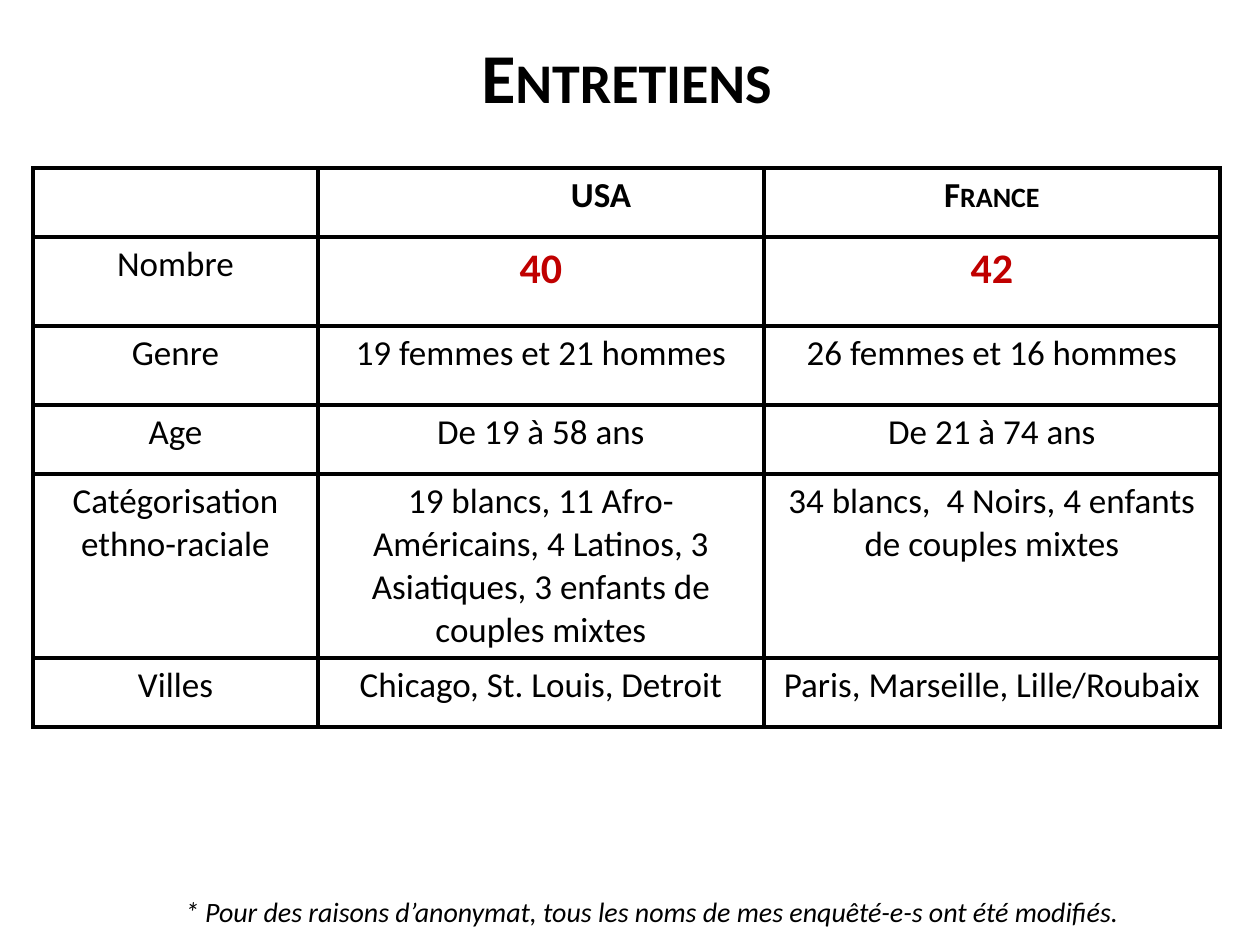
from pptx import Presentation
from pptx import util as u
from pptx.dml.color import RGBColor
from pptx.enum import text as t
from pptx.oxml import parse_xml
from pptx.oxml.ns import nsdecls

PX = 914400 // 126
BLACK = RGBColor(0, 0, 0)
WHITE = RGBColor(255, 255, 255)
RED = RGBColor(0xC0, 0, 0)


def write(frame, words, size=20, color=BLACK, bold=False, italic=False, small=False):
    para = frame.paragraphs[0]
    para.alignment = t.PP_ALIGN.CENTER
    run = para.add_run()
    run.text = words
    font = run.font
    font.name, font.size = "Calibri", u.Pt(size)
    font.bold, font.italic = bold, italic
    font.color.rgb = color
    if small:
        run._r.get_or_add_rPr().set("cap", "small")
    return para


def edge(cell):
    props = cell._tc.get_or_add_tcPr()
    for spot, side in enumerate(("lnL", "lnR", "lnT", "lnB")):
        props.insert(spot, parse_xml(
            f'<a:{side} {nsdecls("a")} w="{u.Pt(2.25)}"><a:solidFill>'
            f'<a:srgbClr val="{BLACK}"/></a:solidFill></a:{side}>'))


deck = Presentation()
deck.slide_width, deck.slide_height = u.Inches(10), u.Inches(7.5)
slide = deck.slides.add_slide(deck.slide_layouts[5])

# Title
title = slide.shapes.title
title.left, title.top, title.width, title.height = [n * PX for n in (150, 27, 953, 97)]
title.text_frame.vertical_anchor = t.MSO_ANCHOR.TOP
write(title.text_frame, "Entretiens", size=40, bold=True, small=True)

# Interview table
rows = [
    ("", "USA", "France"),
    ("Nombre", "40", "42"),
    ("Genre", "19 femmes et 21 hommes", "26 femmes et 16 hommes"),
    ("Age", "De 19 à 58 ans", "De 21 à 74 ans"),
    ("Catégorisation ethno-raciale",
     "19 blancs, 11 Afro-Américains, 4 Latinos, 3 Asiatiques, 3 enfants de couples mixtes",
     "34 blancs,  4 Noirs, 4 enfants de couples mixtes"),
    ("Villes", "Chicago, St. Louis, Detroit", "Paris, Marseille, Lille/Roubaix"),
]
wide = (285, 446, 456)
high = (69, 89, 79, 69, 181, 69)
grid = slide.shapes.add_table(len(rows), len(wide), 33 * PX, 168 * PX,
                              sum(wide) * PX, sum(high) * PX).table
grid.first_row = grid.horz_banding = False
for col, width in zip(grid.columns, wide):
    col.width = width * PX
for r, words in enumerate(rows):
    grid.rows[r].height = high[r] * PX
    for c, word in enumerate(words):
        cell = grid.cell(r, c)
        cell.fill.solid()
        cell.fill.fore_color.rgb = WHITE
        edge(cell)
        if r == 0 and word:
            para = write(cell.text_frame, word, bold=True, small=True)
            if word == "USA":
                para._p.get_or_add_pPr().set("marL", str(60 * PX))
        elif r == 1 and c > 0:
            write(cell.text_frame, word, size=24, color=RED, bold=True)
        elif word:
            write(cell.text_frame, word)

# Footnote
note = slide.shapes.add_textbox(*[n * PX for n in (59, 888, 1186, 47)]).text_frame
note.word_wrap = True
write(note, "* Pour des raisons d’anonymat, tous les noms de mes enquêté-e-s ont été modifiés.",
      size=16, italic=True)

deck.save("out.pptx")
